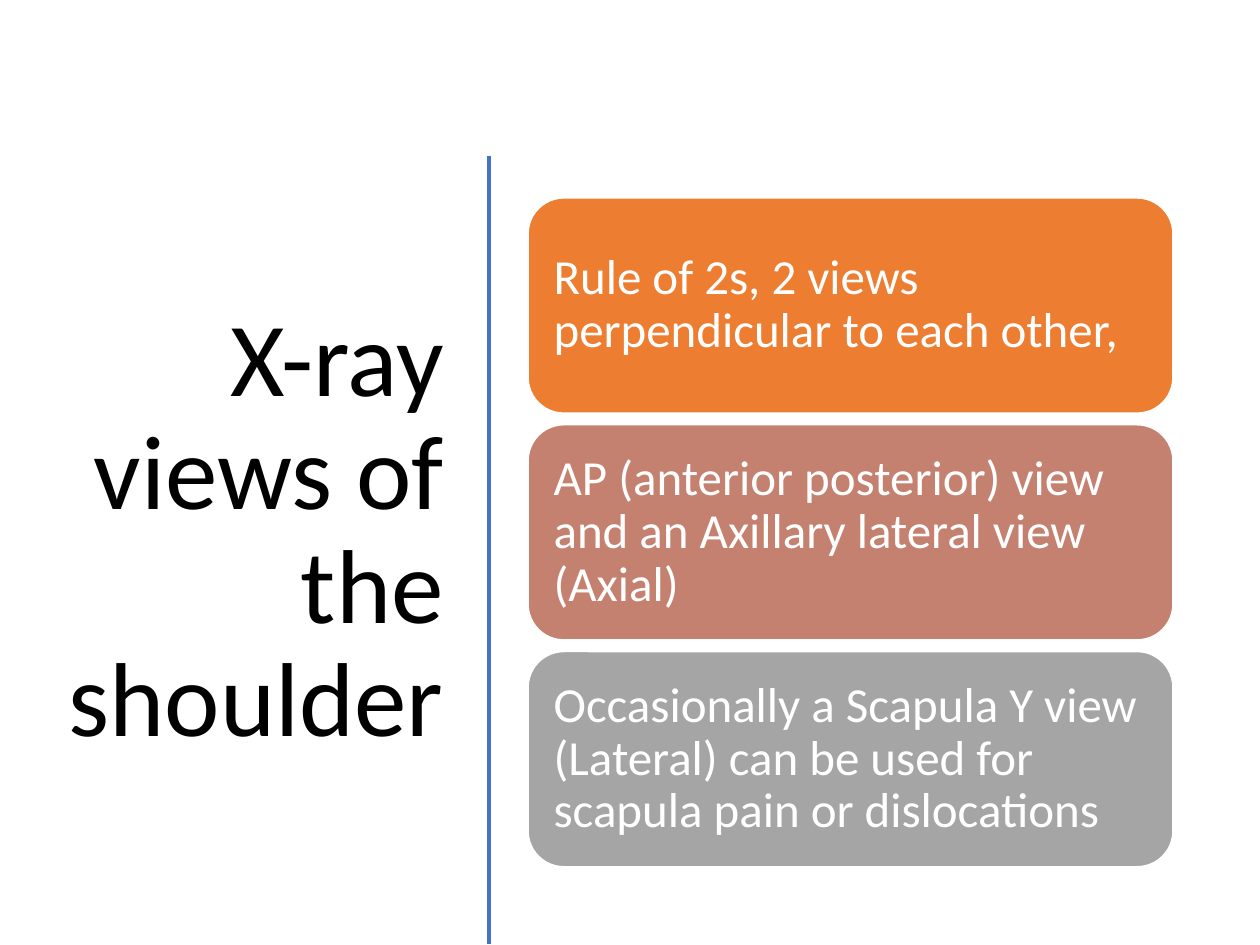
from dataclasses import dataclass

from lxml import etree
from pptx import Presentation
from pptx import util as u
from pptx.dml.color import RGBColor
from pptx.enum import shapes, text
from pptx.oxml import ns

WIDTH, HEIGHT = 10, 7.5


@dataclass(frozen=True)
class Theme:
    font: str = "Calibri"
    title_size: int = 60
    card_size: int = 28
    ink: str = "000000"
    paper: str = "FFFFFF"
    divider: str = "4472C4"
    cards: tuple = ("ED7D31", "C48170", "A5A5A5")


def write_text(frame, words, *, font, size, color, align, inset):
    frame.word_wrap = True
    frame.auto_size = text.MSO_AUTO_SIZE.NONE
    frame.vertical_anchor = text.MSO_ANCHOR.MIDDLE
    frame.margin_left = frame.margin_right = u.Inches(inset[0])
    frame.margin_top = frame.margin_bottom = u.Inches(inset[1])
    para = frame.paragraphs[0]
    para.alignment = align
    para.line_spacing = 0.9
    span = para.add_run()
    span.text = words
    span.font.name = font
    span.font.size = u.Pt(size)
    span.font.color.rgb = RGBColor.from_string(color)


class SlideBuilder:
    """Places elements by shares of the slide's width and height."""

    def __init__(self, deck, theme):
        self.deck = deck
        self.theme = theme
        self.slide = deck.slides.add_slide(deck.slide_layouts[5])

    def x(self, share):
        return round(self.deck.slide_width * share)

    def y(self, share):
        return round(self.deck.slide_height * share)

    def title(self, words, left, top, width, height):
        box = self.slide.shapes.title
        box.left, box.top = self.x(left), self.y(top)
        box.width, box.height = self.x(width), self.y(height)
        write_text(box.text_frame, words, font=self.theme.font,
                   size=self.theme.title_size, color=self.theme.ink,
                   align=text.PP_ALIGN.RIGHT, inset=(0.1, 0.05))

    def divider(self, left, top, bottom):
        line = self.slide.shapes.add_connector(
            shapes.MSO_CONNECTOR.STRAIGHT,
            self.x(left), self.y(top), self.x(left), self.y(bottom))
        line.line.color.rgb = RGBColor.from_string(self.theme.divider)
        line.line.width = u.Pt(2)
        etree.SubElement(line._element.spPr, ns.qn("a:effectLst"))

    def card(self, words, fill, left, top, width, height):
        box = self.slide.shapes.add_shape(
            shapes.MSO_SHAPE.ROUNDED_RECTANGLE,
            self.x(left), self.y(top), self.x(width), self.y(height))
        box.shadow.inherit = False
        box.fill.solid()
        box.fill.fore_color.rgb = RGBColor.from_string(fill)
        box.line.color.rgb = RGBColor.from_string(self.theme.paper)
        box.line.width = u.Pt(1)
        write_text(box.text_frame, words, font=self.theme.font,
                   size=self.theme.card_size, color=self.theme.paper,
                   align=text.PP_ALIGN.LEFT, inset=(0.12, 0.12))

    def card_stack(self, items, left, top, width, height, pitch):
        for row, (words, fill) in enumerate(zip(items, self.theme.cards)):
            self.card(words, fill, left, top + row * pitch, width, height)


def main():
    deck = Presentation()
    deck.slide_width, deck.slide_height = u.Inches(WIDTH), u.Inches(HEIGHT)
    page = SlideBuilder(deck, Theme())
    page.title("X-ray views of the shoulder",
               0.39 / WIDTH, 1.17 / HEIGHT, 3.23 / WIDTH, 6.11 / HEIGHT)
    page.divider(3.88 / WIDTH, 1.24 / HEIGHT, 7.49 / HEIGHT)
    page.card_stack(
        ["Rule of 2s, 2 views perpendicular to each other,",
         "AP (anterior posterior) view and an Axillary lateral view (Axial)",
         "Occasionally a Scapula Y view (Lateral) can be used for "
         "scapula pain or dislocations"],
        4.19 / WIDTH, 1.57 / HEIGHT, 5.12 / WIDTH, 1.71 / HEIGHT,
        pitch=1.8 / HEIGHT)
    deck.save("out.pptx")


if __name__ == "__main__":
    main()
